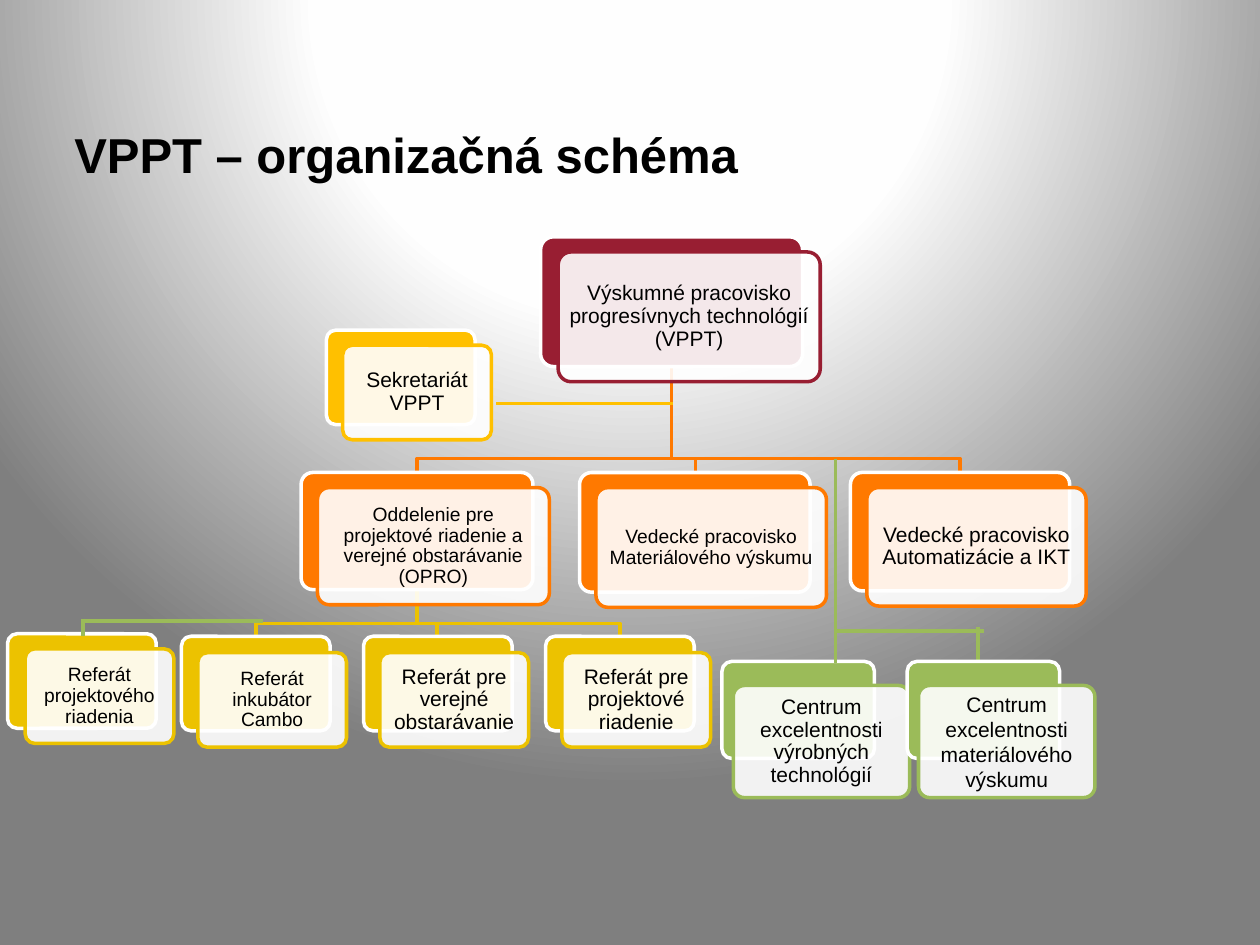
from dataclasses import dataclass

from lxml import etree
from pptx import Presentation
from pptx import util as u
from pptx.dml.color import RGBColor
from pptx.enum import shapes, text
from pptx.oxml import parse_xml
from pptx.oxml.ns import qn

NS = ('xmlns:a="http://schemas.openxmlformats.org/drawingml/2006/main" '
      'xmlns:p="http://schemas.openxmlformats.org/presentationml/2006/main"')


@dataclass(frozen=True)
class Theme:
    font: str = "Arial"
    black: str = "000000"
    white: str = "FFFFFF"
    red: str = "981E32"
    orange: str = "FF7900"
    yellow: str = "ECC200"
    amber: str = "FFC000"
    green: str = "9BBB59"
    title: int = 28
    body: int = 12
    small: int = 11
    line: float = 2
    thin: float = 1.5
    stops: tuple = ((0, "FFFFFF"), (40, "FEFEFE"), (100, "7F7F7F"))


T = Theme()


class OrgChart:
    """Holds the theme and the slide that is being drawn."""

    def __init__(self, s, theme):
        self.s, self.t = s, theme

    def background(self):
        stops = "".join(f'<a:gs pos="{pos * 1000}"><a:srgbClr val="{c}"/></a:gs>'
                        for pos, c in self.t.stops)
        self.s._element.cSld.insert(0, parse_xml(
            f'<p:bg {NS}><p:bgPr><a:gradFill rotWithShape="1"><a:gsLst>{stops}</a:gsLst>'
            '<a:path path="circle"><a:fillToRect l="50000" t="-80000" r="50000" b="180000"/>'
            '</a:path></a:gradFill><a:effectLst/></p:bgPr></p:bg>'))

    def caption(self, sp, words, size, left=0.05, right=0.05, bold=False,
                align=text.PP_ALIGN.CENTER, spacing=0.9):
        tf = sp.text_frame
        frame = dict(word_wrap=True, vertical_anchor=text.MSO_ANCHOR.MIDDLE,
                     margin_left=u.Inches(left), margin_right=u.Inches(right),
                     margin_top=u.Inches(0.05), margin_bottom=u.Inches(0.05))
        for name, value in frame.items():
            setattr(tf, name, value)
        p = tf.paragraphs[0]
        p.alignment, p.line_spacing = align, spacing
        r = p.add_run()
        r.text = words
        for name, value in dict(name=self.t.font, size=u.Pt(size), bold=bold).items():
            setattr(r.font, name, value)
        r.font.color.rgb = RGBColor.from_string(self.t.black)

    def title(self, words, *box):
        sp = self.s.shapes.title
        for name, value in zip(("left", "top", "width", "height"), box):
            setattr(sp, name, u.Inches(value))
        self.caption(sp, words, self.t.title, left=0, right=0.1, bold=True,
                     align=text.PP_ALIGN.LEFT, spacing=1.0)

    def stroke(self, sp, color, width):
        sp.line.color.rgb = RGBColor.from_string(color)
        sp.line.width = u.Pt(width)

    def line(self, x1, y1, x2, y2, color, width=T.line):
        c = self.s.shapes.add_connector(shapes.MSO_CONNECTOR.STRAIGHT,
                                        *map(u.Inches, (x1, y1, x2, y2)))
        self.stroke(c, color, width)
        etree.SubElement(c._element.spPr, qn("a:effectLst"))

    def branch(self, x1, y1, x2, y2, turn, color):
        points = [(u.Inches(x), u.Inches(y))
                  for x, y in ((x1, y1), (x1, turn), (x2, turn), (x2, y2))]
        fb = self.s.shapes.build_freeform(*points[0])
        fb.add_line_segments(points[1:], close=False)
        sp = fb.convert_to_shape()
        sp.shadow.inherit = False
        sp.fill.background()
        self.stroke(sp, color, self.t.line)

    def panel(self, box, fill, line, alpha=None):
        sp = self.s.shapes.add_shape(shapes.MSO_SHAPE.ROUNDED_RECTANGLE, *map(u.Inches, box))
        sp.adjustments[0] = 0.1
        sp.shadow.inherit = False
        sp.fill.solid()
        sp.fill.fore_color.rgb = RGBColor.from_string(fill)
        if alpha:
            clr = sp._element.spPr.find(qn("a:solidFill")).find(qn("a:srgbClr"))
            etree.SubElement(clr, qn("a:alpha"), val=str(alpha * 1000))
        self.stroke(sp, line, self.t.line)
        return sp

    def card(self, words, x, y, w, h, color, size=T.body, dx=0.13, dy=0.12,
             front=None, spacing=0.9):
        """Coloured panel with a translucent, captioned panel shifted over it."""
        self.panel((x, y, w, h), color, self.t.white)
        sp = self.panel((x + dx, y + dy, *(front or (w, h))), self.t.white, color, alpha=90)
        self.caption(sp, words, size, spacing=spacing)


def main():
    prs = Presentation()
    prs.slide_width, prs.slide_height = u.Inches(10), u.Inches(7.5)
    chart = OrgChart(prs.slides.add_slide(prs.slide_layouts[5]), T)
    chart.background()
    chart.title("VPPT – organizačná schéma", 0.59, 0.6, 9, 1.25)

    # Branch to the centres of excellence
    chart.line(6.63, 5.01, 7.81, 5.01, T.green)
    chart.line(7.76, 4.98, 7.76, 5.26, T.green)

    # Branches from the head to the departments, and from OPRO to its desks
    for x in (7.62, 5.52):
        chart.branch(5.33, 2.91, x, 3.75, 3.64, T.orange)
    for x in (4.92, 3.47, 2.03):
        chart.branch(3.31, 4.68, x, 5.05, 4.95, T.yellow)
    chart.branch(5.33, 2.91, 3.31, 3.75, 3.64, T.orange)

    # Head and secretariat
    small = (1.18, 0.75)
    chart.card("Výskumné pracovisko progresívnych technológií (VPPT)",
               4.29, 1.88, 2.08, 1.03, T.red, dx=0.14)
    chart.card("Sekretariát VPPT", 2.59, 2.62, *small, T.amber)

    # Departments
    for words, x, w, h, size in (
            ("Oddelenie pre projektové riadenie a verejné obstarávanie (OPRO)",
             2.39, 1.84, 0.93, T.small),
            ("Vedecké pracovisko Materiálového výskumu", 4.6, 1.83, 0.95, T.small),
            ("Vedecké pracovisko Automatizácie a IKT", 6.75, 1.74, 0.94, T.body)):
        chart.card(words, x, 3.75, w, h, T.orange, size)

    # Desks
    for i, (words, size) in enumerate((
            ("Referát inkubátor Cambo", T.small),
            ("Referát pre verejné obstarávanie", T.body),
            ("Referát pre projektové riadenie", T.body))):
        chart.card(words, 1.44 + 1.445 * i, 5.05, *small, T.yellow, size, dy=0.13)
    chart.card("Referát projektového riadenia", 0.06, 5.03, *small, T.yellow, T.small, dx=0.14)

    # Centres of excellence
    for words, x, spacing in (
            ("Centrum excelentnosti výrobných technológií", 5.73, 0.9),
            ("Centrum excelentnosti materiálového výskumu", 7.2, 1.0)):
        chart.card(words, x, 5.25, 1.21, 0.77, T.green, dx=0.09, dy=0.19,
                   front=(1.4, 0.89), spacing=spacing)

    # Straight links
    chart.line(6.63, 3.64, 6.63, 5.26, T.green)
    chart.line(3.94, 3.2, 5.34, 3.2, T.amber, T.thin)
    chart.line(0.66, 4.93, 2.09, 4.93, T.green)
    chart.line(0.66, 4.91, 0.66, 5.05, T.green)

    prs.save("out.pptx")


if __name__ == "__main__":
    main()
